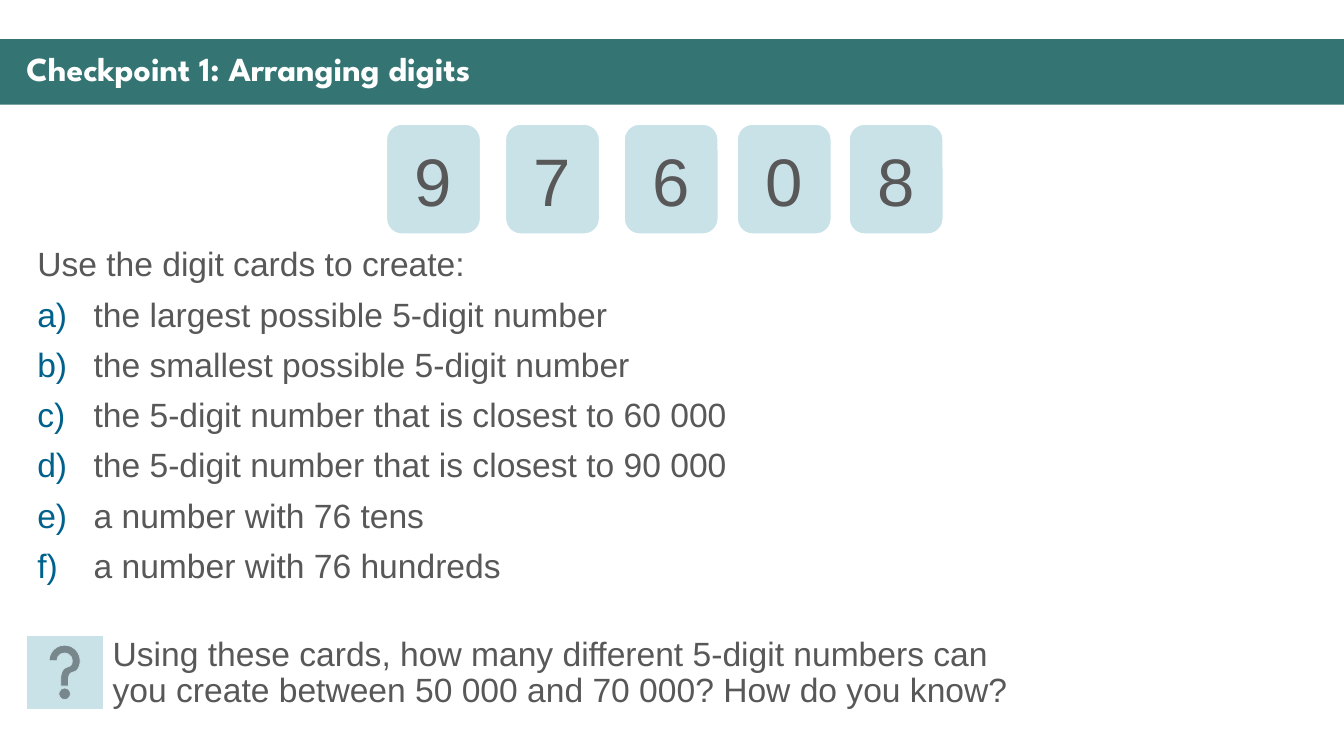
"""Build the digit-card checkpoint slide."""
from dataclasses import dataclass

from lxml.etree import SubElement
from pptx import Presentation
from pptx.dml.color import RGBColor
from pptx.enum.shapes import MSO_SHAPE as Shp
from pptx.enum.text import MSO_ANCHOR as Anchor, MSO_AUTO_SIZE as AutoSize, PP_ALIGN as Align
from pptx.oxml.ns import qn
from pptx.util import Cm, Pt

TEAL, PALE, GREY, BLUE, WHITE = "347574", "C8E2E8", "585858", "00628C", "FFFFFF"
INDENT = Cm(1.42)
TASKS = [
    "the largest possible 5-digit number",
    "the smallest possible 5-digit number",
    "the 5-digit number that is closest to 60 000",
    "the 5-digit number that is closest to 90 000",
    "a number with 76 tens",
    "a number with 76 hundreds",
]
QUESTION = (
    "Using these cards, how many different 5-digit numbers can you create "
    "between 50 000 and 70 000? How do you know?"
)


@dataclass
class Box:
    left: float
    top: float
    width: float
    height: float

    def lengths(self) -> tuple:
        return Cm(self.left), Cm(self.top), Cm(self.width), Cm(self.height)


@dataclass
class Card:
    digit: str
    left: float


CARDS = [Card("9", 9.73), Card("7", 12.73), Card("6", 15.72), Card("0", 18.57), Card("8", 21.39)]


def rgb(value: str) -> RGBColor:
    return RGBColor.from_string(value)


def style(p, size: float = 24, font: str = "Arial", color: str = GREY, bold: bool = False) -> None:
    for r in p.runs:
        r.font.size, r.font.name, r.font.bold = Pt(size), font, bold
        r.font.color.rgb = rgb(color)


def space(p) -> None:
    p.line_spacing, p.space_before = 0.9, Pt(10)


def add_letter(p) -> None:
    pPr = p._p.get_or_add_pPr()
    pPr.set("marL", str(INDENT))
    pPr.set("indent", str(-INDENT))
    SubElement(SubElement(pPr, qn("a:buClr")), qn("a:srgbClr"), val=BLUE)
    SubElement(pPr, qn("a:buFont"), typeface="Arial")
    SubElement(pPr, qn("a:buAutoNum"), type="alphaLcParenR")


def add_shape(s, kind: Shp, box: Box, fill: str, line: str = "", weight: float = 0):
    sp = s.shapes.add_shape(kind, *box.lengths())
    sp.shadow.inherit = False
    sp.fill.solid()
    sp.fill.fore_color.rgb = rgb(fill)
    if line:
        sp.line.color.rgb = rgb(line)
        sp.line.width = Pt(weight)
    else:
        sp.line.fill.background()
    return sp


def add_title(s, text: str) -> None:
    sp = s.shapes.title
    sp.left, sp.top, sp.width, sp.height = Box(0.41, 1.19, 33.12, 1.19).lengths()
    tf = sp.text_frame
    tf.text = text
    tf.auto_size, tf.vertical_anchor = AutoSize.NONE, Anchor.MIDDLE
    p = tf.paragraphs[0]
    p.alignment = Align.LEFT
    space(p)
    style(p, font="League Spartan", color=WHITE, bold=True)


def add_text(s, box: Box, lines: list[str]):
    tf = s.shapes.add_textbox(*box.lengths()).text_frame
    tf.word_wrap = True
    tf.text = "\n".join(lines)
    for p in tf.paragraphs:
        space(p)
        style(p)
    return tf


def add_card(s, card: Card) -> None:
    sp = add_shape(s, Shp.ROUNDED_RECTANGLE, Box(card.left, 3.12, 2.39, 2.79), PALE, WHITE, 1.5)
    tf = sp.text_frame
    tf.text = card.digit
    tf.vertical_anchor = Anchor.MIDDLE
    p = tf.paragraphs[0]
    p.alignment = Align.CENTER
    style(p, size=48)


def main() -> None:
    prs = Presentation()
    prs.slide_width, prs.slide_height = Cm(33.87), Cm(19.05)
    s = prs.slides.add_slide(prs.slide_layouts[5])

    band = add_shape(s, Shp.RECTANGLE, Box(0, 0.99, 33.87, 1.65), TEAL)
    s.shapes.title.element.addprevious(band.element)
    add_title(s, "Checkpoint 1: Arranging digits")

    tasks = add_text(s, Box(0.69, 6.12, 32.54, 9.35), ["Use the digit cards to create:", *TASKS])
    for p in tasks.paragraphs[1:]:
        add_letter(p)
    for card in CARDS:
        add_card(s, card)

    add_text(s, Box(2.59, 15.93, 23.52, 2.13), [QUESTION])
    add_shape(s, Shp.ACTION_BUTTON_HELP, Box(0.69, 16.03, 1.88, 1.83), PALE, PALE, 0.5)
    prs.save("out.pptx")


if __name__ == "__main__":
    main()
